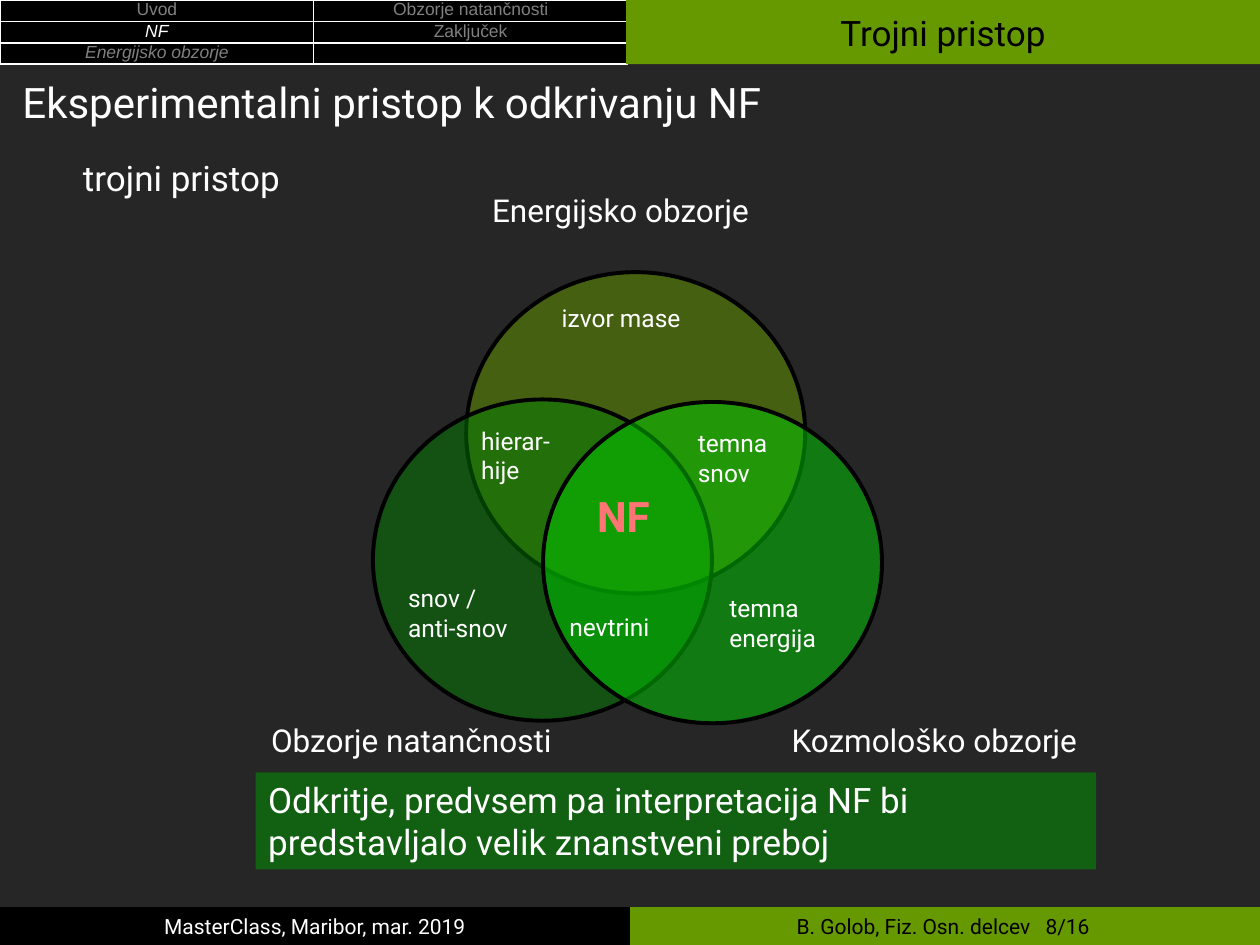
from lxml import etree
from pptx import Presentation
from pptx.dml.color import RGBColor
from pptx.enum.shapes import MSO_SHAPE
from pptx.enum.text import MSO_ANCHOR, PP_ALIGN
from pptx.oxml.ns import qn
from pptx.util import Inches, Pt

RECTANGLE, OVAL = MSO_SHAPE.RECTANGLE, MSO_SHAPE.OVAL
LEFT, CENTER, RIGHT = PP_ALIGN.LEFT, PP_ALIGN.CENTER, PP_ALIGN.RIGHT
TOP, MIDDLE = MSO_ANCHOR.TOP, MSO_ANCHOR.MIDDLE
BLACK, WHITE, GREY, OLIVE = "000000", "FFFFFF", "808080", "669900"


def color(value):
    return RGBColor.from_string(value)


def paint(fill, value, opacity=None):
    fill.solid()
    fill.fore_color.rgb = color(value)
    if opacity is not None:
        solid = fill._xPr.find(qn("a:solidFill"))
        etree.SubElement(solid[0], qn("a:alpha"), val=str(opacity * 1000))


def write(frame, text, size=14, font="Roboto", ink=WHITE, bold=False,
          italic=False, align=LEFT, anchor=TOP):
    """Fill a text frame, one paragraph for each line of text."""
    frame.word_wrap = True
    frame.vertical_anchor = anchor
    for index, line in enumerate(text.split("\n")):
        paragraph = frame.paragraphs[0] if index == 0 else frame.add_paragraph()
        paragraph.alignment = align
        run = paragraph.add_run()
        run.text = line
        run.font.size = Pt(size)
        run.font.name = font
        run.font.bold = bold
        run.font.italic = italic
        run.font.color.rgb = color(ink)


def add_label(slide, box, text, **style):
    label = slide.shapes.add_textbox(*map(Inches, box))
    write(label.text_frame, text, **style)
    return label


def add_block(slide, kind, box, fill, opacity=None, line=None):
    shape = slide.shapes.add_shape(kind, *map(Inches, box))
    shape.shadow.inherit = False
    paint(shape.fill, fill, opacity)
    if line:
        shape.line.color.rgb = color(line)
        shape.line.width = Pt(2.25)
    else:
        shape.line.fill.background()
    return shape


def add_navigation(slide, box):
    """Section list in two columns; the current section is white."""
    rows = [["Uvod", "Obzorje natančnosti"],
            ["NF", "Zaključek"],
            ["Energijsko obzorje", ""]]
    table = slide.shapes.add_table(3, 2, *map(Inches, box)).table
    table.first_row = table.horz_banding = False
    for row, names in zip(table.rows, rows):
        row.height = Inches(box[3] / 3)
        for cell, name in zip(row.cells, names):
            paint(cell.fill, BLACK)
            cell.margin_left = cell.margin_right = 0
            cell.margin_top = cell.margin_bottom = 0
            if name:
                write(cell.text_frame, name, size=10, font="Arial", align=CENTER,
                      ink=WHITE if name == "NF" else GREY,
                      italic=name in ("NF", "Energijsko obzorje"))
            else:
                # Small end mark keeps the empty cell from growing the row
                etree.SubElement(cell.text_frame.paragraphs[0]._p,
                                 qn("a:endParaRPr"), sz="1000")


def add_header(slide, box):
    left, top, width, height = box
    split = 4.97
    add_navigation(slide, (left, top, split + 0.01, height))
    title = add_block(slide, RECTANGLE,
                      (left + split, top, width - split, height), OLIVE)
    write(title.text_frame, "Trojni pristop", size=20, ink=BLACK,
          align=CENTER, anchor=MIDDLE)


def add_footer(slide, box):
    left, top, width, height = box
    half = width / 2
    author = add_block(slide, RECTANGLE, (left + half, top, half, height), OLIVE)
    author.text_frame.margin_right = Inches(1.82)
    write(author.text_frame, "B. Golob, Fiz. Osn. delcev", size=12, ink=BLACK,
          align=RIGHT, anchor=MIDDLE)
    event = add_block(slide, RECTANGLE, (left, top, half, height), BLACK)
    write(event.text_frame, "MasterClass, Maribor, mar. 2019", size=12,
          align=CENTER, anchor=MIDDLE)
    add_label(slide, (left + 8.2, top, 0.7, height), "8/16", size=12,
              ink=BLACK, anchor=MIDDLE)


def add_venn(slide, box):
    """Three overlapping circles with outer titles and inner topics."""
    left, top = box[:2]
    circles = [(1.96, 0.69, OLIVE, 51), (1.22, 1.7, "008000", 49),
               (2.57, 1.72, "00CC00", 51)]
    for x, y, fill, opacity in circles:
        add_block(slide, OVAL, (left + x, top + y, 2.69, 2.55), fill, opacity,
                  line=BLACK)

    titles = [(1.73, 0, 2.91, "Energijsko obzorje"),
              (0, 4.2, 3.05, "Obzorje natančnosti"),
              (4.13, 4.2, 3.09, "Kozmološko obzorje")]
    for x, y, width, text in titles:
        add_label(slide, (left + x, top + y, width, 0.4), text, size=18,
                  align=CENTER)

    topics = [(2.68, 3.34, "nevtrini"), (2.62, 0.89, "izvor mase"),
              (1.4, 3.11, "snov /\nanti-snov"),
              (3.95, 3.19, "temna\nenergija"),
              (3.7, 1.88, "temna\nsnov"), (1.98, 1.86, "hierar-\nhije")]
    for x, y, text in topics:
        height = 0.57 if "\n" in text else 0.34
        add_label(slide, (left + x, top + y, 1.3, height), text)
    add_label(slide, (left + 2.9, top + 2.37, 0.73, 0.5), "NF", size=24,
              ink="FF7575", bold=True)


def add_conclusion(slide, box):
    banner = add_block(slide, RECTANGLE, box, "009900", 51)
    write(banner.text_frame, "Odkritje, predvsem pa interpretacija NF bi\n"
          "predstavljalo velik znanstveni preboj", size=20)


def main():
    presentation = Presentation()
    presentation.slide_width = Inches(10)
    presentation.slide_height = Inches(7.5)
    slide = presentation.slides.add_slide(presentation.slide_layouts[6])
    paint(slide.background.fill, "262626")

    add_footer(slide, (0, 7.2, 10, 0.3))
    add_header(slide, (0, 0, 10, 0.51))
    # Headings
    add_label(slide, (0.08, 0.56, 7.57, 0.5),
              "Eksperimentalni pristop k odkrivanju NF", size=24)
    add_label(slide, (0.56, 1.19, 2.34, 0.44), "trojni pristop", size=20)
    add_venn(slide, (1.74, 1.47, 7.22, 4.6))
    add_conclusion(slide, (2.03, 6.13, 6.67, 0.77))
    presentation.save("out.pptx")


if __name__ == "__main__":
    main()
